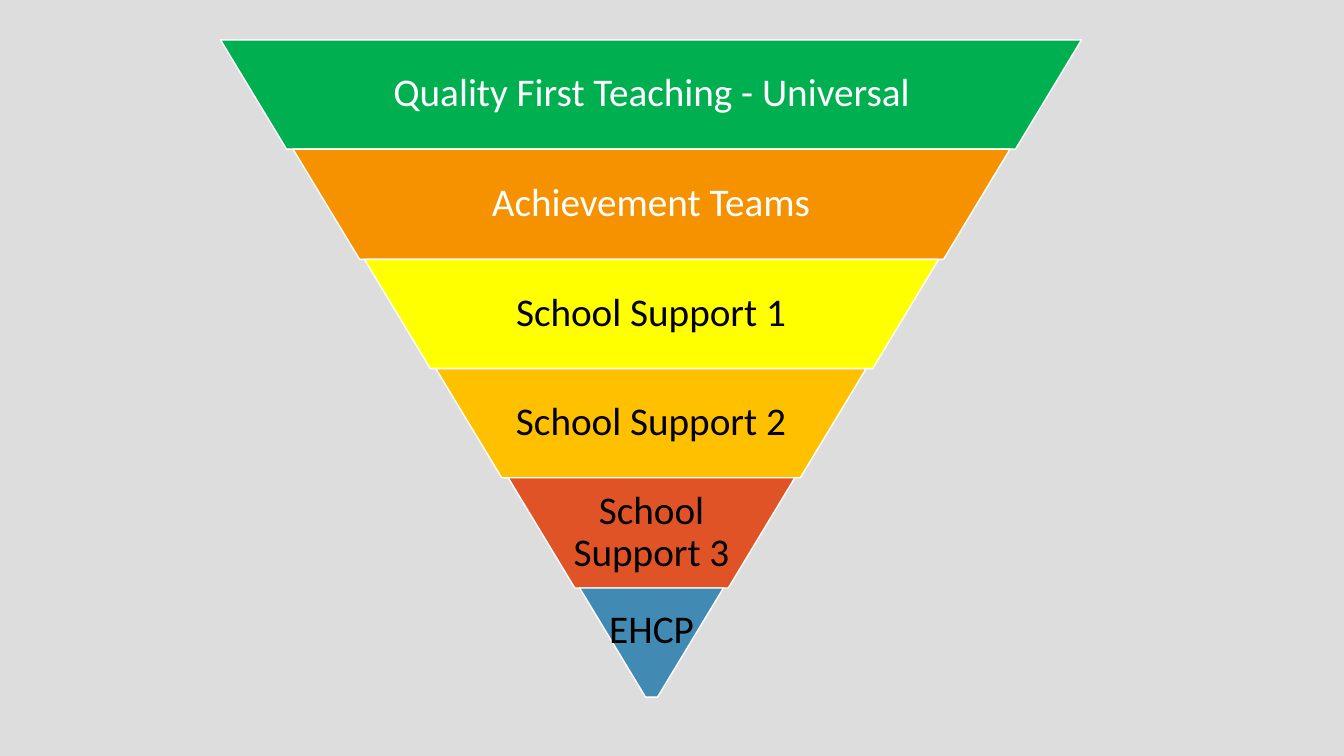
"""Build a slide with an inverted pyramid of school support tiers."""
import pptx
import pptx.dml.color
import pptx.enum.shapes
import pptx.enum.text
import pptx.util

PX = 9525
CENTER_X = 620
PYRAMID_TOP = 38
PYRAMID_WIDTH = 820
PYRAMID_HEIGHT = 626
LABEL_SHARE = 0.65
TIERS = [
    ("Quality First Teaching - Universal", "00B050", "FFFFFF"),
    ("Achievement Teams", "F69200", "FFFFFF"),
    ("School Support 1", "FFFF00", "000000"),
    ("School Support 2", "FFC000", "000000"),
    ("School Support 3", "DF5327", "000000"),
    ("EHCP", "418AB3", "000000"),
]


def px(length):
    """Turn pixels into EMU."""
    return pptx.util.Emu(length * PX)


def color(hex_value):
    """Turn a hex string into a colour."""
    return pptx.dml.color.RGBColor.from_string(hex_value)


def centered_box(top, width, height):
    """Return the EMU box centred on the pyramid axis."""
    return px(CENTER_X - width // 2), px(top), px(width), px(height)


def add_band(slide, top, width, height, fill):
    """Add one upside-down trapezoid."""
    kind = pptx.enum.shapes.MSO_SHAPE.TRAPEZOID
    shape = slide.shapes.add_shape(kind, *centered_box(top, width, height))
    shape.adjustments[0] = 0.604
    shape.rotation = 180
    shape.shadow.inherit = False
    shape.fill.solid()
    shape.fill.fore_color.rgb = color(fill)
    shape.line.color.rgb = color("FFFFFF")
    shape.line.width = pptx.util.Pt(1)


def add_label(slide, text, top, width, height, text_color, bottom_inset):
    """Add the centred label of a band."""
    frame = slide.shapes.add_textbox(*centered_box(top, width, height)).text_frame
    frame.word_wrap = True
    frame.vertical_anchor = pptx.enum.text.MSO_ANCHOR.MIDDLE
    frame.margin_left = frame.margin_right = frame.margin_top = px(2)
    frame.margin_bottom = px(bottom_inset)
    paragraph = frame.paragraphs[0]
    paragraph.text = text
    paragraph.alignment = pptx.enum.text.PP_ALIGN.CENTER
    paragraph.line_spacing = 0.89
    paragraph.font.name = "Calibri"
    paragraph.font.size = pptx.util.Pt(28)
    paragraph.font.color.rgb = color(text_color)


def add_pyramid(slide):
    """Stack the tiers from the widest to the tip."""
    count = len(TIERS)
    for index, (text, fill, text_color) in enumerate(TIERS):
        top = PYRAMID_TOP + round(PYRAMID_HEIGHT * index / count)
        bottom = PYRAMID_TOP + round(PYRAMID_HEIGHT * (index + 1) / count)
        width = round(PYRAMID_WIDTH * (count - index) / count)
        is_tip = index == count - 1
        label_width = width if is_tip else round(width * LABEL_SHARE)
        add_band(slide, top, width, bottom - top, fill)
        add_label(slide, text, top, label_width, bottom - top, text_color,
                  25 if is_tip else 2)


def main():
    """Create and save the presentation."""
    presentation = pptx.Presentation()
    presentation.slide_width = px(1280)
    presentation.slide_height = px(720)
    slide = presentation.slides.add_slide(presentation.slide_layouts[6])
    slide.background.fill.solid()
    slide.background.fill.fore_color.rgb = color("DDDDDD")
    add_pyramid(slide)
    presentation.save("out.pptx")


if __name__ == "__main__":
    main()
